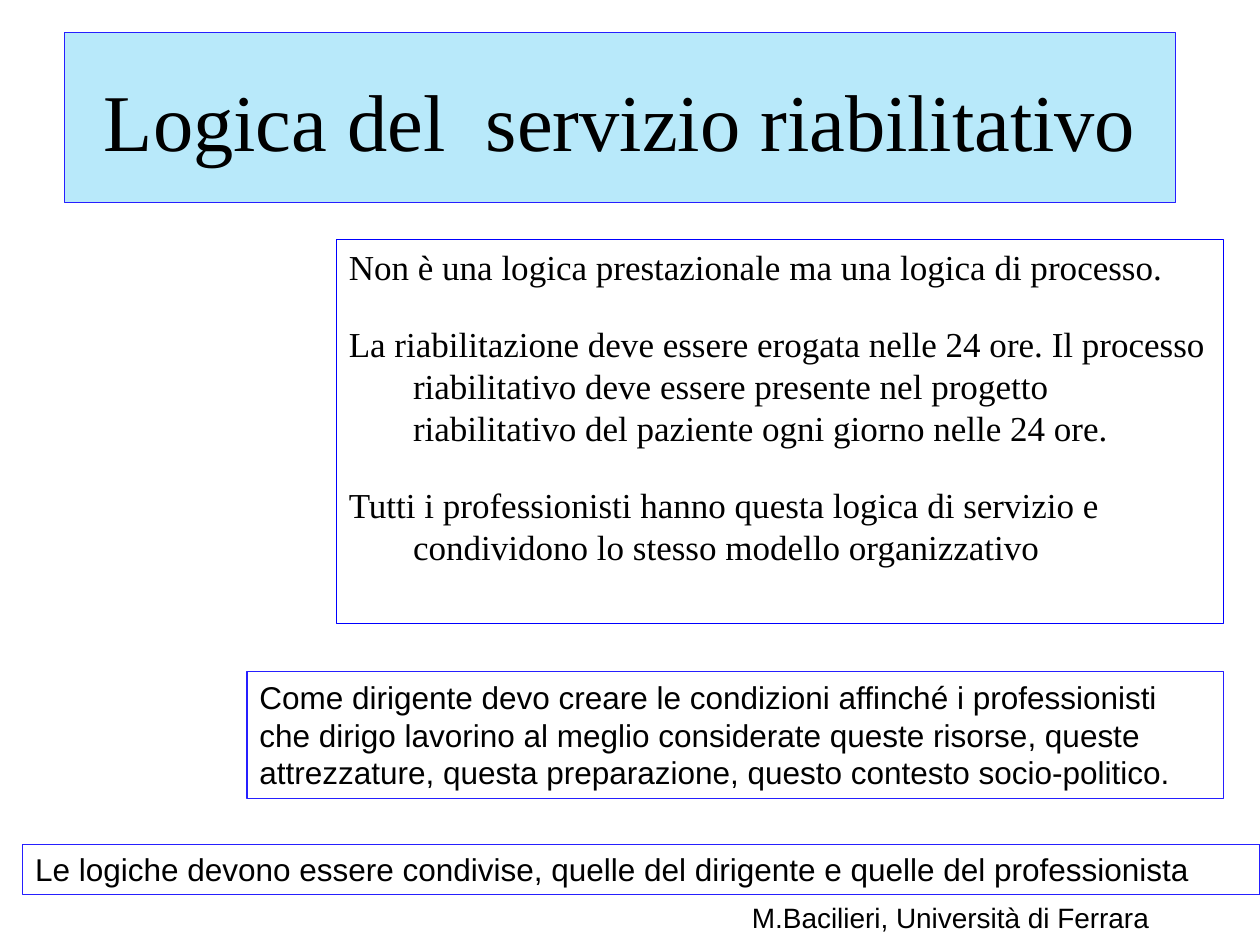
"""Build the slide on the logic of the rehabilitation service."""
from pptx import Presentation
from pptx.dml.color import RGBColor
from pptx.enum.text import MSO_ANCHOR, MSO_AUTO_SIZE, PP_ALIGN
from pptx.util import Inches, Pt

COLORS = {"ink": "000000", "title_fill": "B8E9FA", "violet": "261FFF", "blue": "0000FF"}
SERIF, SANS = "Times New Roman", "Arial"
WIDTH, HEIGHT = 10, 7.5
RIGHT = 9.71

TITLE = "Logica del  servizio riabilitativo"
PRINCIPLES = [
    "Non è una logica prestazionale ma una logica di processo.",
    "La riabilitazione deve essere erogata nelle 24 ore. Il processo riabilitativo "
    "deve essere presente nel progetto riabilitativo del paziente ogni giorno nelle 24 ore.",
    "Tutti i professionisti hanno questa logica di servizio e condividono lo stesso "
    "modello organizzativo",
]
MANAGER = [
    "Come dirigente devo creare le condizioni affinché i professionisti che dirigo "
    "lavorino al meglio considerate queste risorse, queste attrezzature, questa "
    "preparazione, questo contesto socio-politico.",
]
SHARED = ["Le logiche devono essere condivise, quelle del dirigente e quelle del professionista"]
AUTHOR = ["M.Bacilieri, Università di Ferrara"]

BOXES = [
    (PRINCIPLES, 2.67, 1.9, RIGHT, 3.05, SERIF, 20, "blue"),
    (MANAGER, 1.96, 5.33, RIGHT, 1.01, SANS, 18, "violet"),
    (SHARED, 0.18, 6.7, WIDTH, 0.4, SANS, 18, "violet"),
    (AUTHOR, 5.87, 7.1, WIDTH, 0.37, SANS, 16, None),
]


def color(name):
    return RGBColor.from_string(COLORS[name])


def outline(shape, name):
    shape.line.color.rgb = color(name)
    shape.line.width = Pt(0.75)


def format_text(para, font_name, size):
    for span in para.runs:
        span.font.name = font_name
        span.font.size = Pt(size)
        span.font.color.rgb = color("ink")


def add_title(page):
    title = page.shapes.title
    title.left, title.top = Inches(0.51), Inches(0.26)
    title.width, title.height = Inches(8.82), Inches(1.35)
    title.fill.solid()
    title.fill.fore_color.rgb = color("title_fill")
    outline(title, "violet")
    frame = title.text_frame
    frame.text = TITLE
    frame.auto_size = MSO_AUTO_SIZE.NONE
    frame.vertical_anchor = MSO_ANCHOR.BOTTOM
    frame.margin_left = frame.margin_right = Inches(0.05)
    frame.margin_top, frame.margin_bottom = 0, Inches(0.28)
    para = frame.paragraphs[0]
    para.alignment = PP_ALIGN.CENTER
    para.line_spacing = Pt(50)
    format_text(para, SERIF, 46)


def add_box(page, texts, left, top, right, height, font_name, size, line):
    box = page.shapes.add_textbox(
        Inches(left), Inches(top), Inches(right - left), Inches(height))
    if line:
        outline(box, line)
    frame = box.text_frame
    frame.word_wrap = True
    frame.text = "\n".join(texts)
    for para in frame.paragraphs:
        format_text(para, font_name, size)
    return frame


def space_principles(frame):
    frame.margin_right = Inches(0.05)
    for index, para in enumerate(frame.paragraphs):
        para.line_spacing = Pt(24)
        if index:
            para.space_before = Pt(20)
        properties = para._p.get_or_add_pPr()
        properties.set("marL", str(Inches(0.51)))
        properties.set("indent", str(-Inches(0.51)))


def main():
    deck = Presentation()
    deck.slide_width, deck.slide_height = Inches(WIDTH), Inches(HEIGHT)
    page = deck.slides.add_slide(deck.slide_layouts[5])
    add_title(page)
    frames = [add_box(page, *box) for box in BOXES]
    space_principles(frames[0])
    deck.save("out.pptx")


if __name__ == "__main__":
    main()
